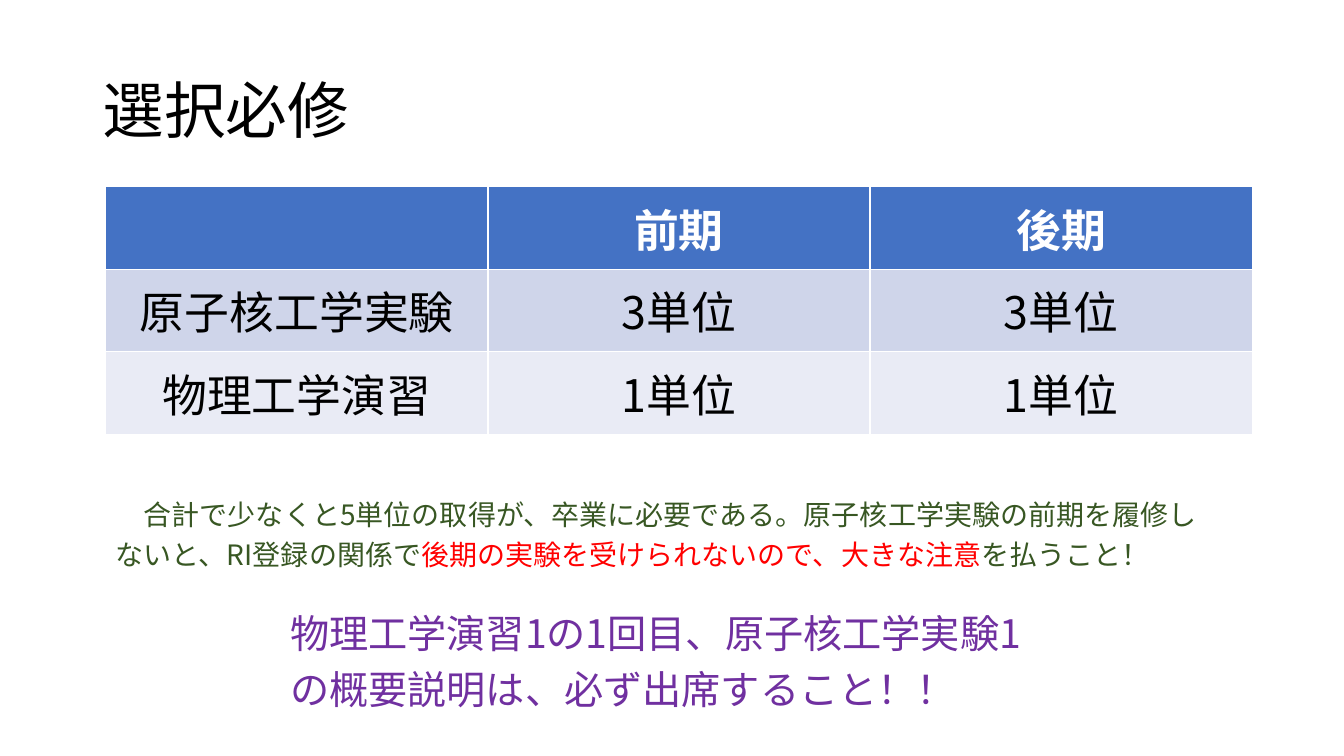
from lxml.etree import SubElement
from pptx import Presentation
from pptx.dml.color import RGBColor
from pptx.enum.text import MSO_ANCHOR, PP_ALIGN
from pptx.oxml.ns import qn
from pptx.util import Inches, Pt

FONT = "Noto Sans CJK JP"
COLORS = {
    "black": "000000",
    "white": "FFFFFF",
    "header": "4472C4",
    "odd_row": "CFD5EA",
    "even_row": "E9EBF5",
    "green": "385723",
    "red": "FF0000",
    "purple": "7030A0",
}
CREDITS = [
    ["", "前期", "後期"],
    ["原子核工学実験", "3単位", "3単位"],
    ["物理工学演習", "1単位", "1単位"],
]
ROW_STYLES = [("header", "white"), ("odd_row", "black"), ("even_row", "black")]
REQUIREMENT = [
    ("\u3000合計で少なくと5単位の取得が、卒業に必要である。"
     "原子核工学実験の前期を履修しないと、RI登録の関係で".replace("\u3000", "　"), "green"),
    ("後期の実験を受けられないので、大きな注意", "red"),
    ("を払うこと！", "green"),
]
ATTENDANCE = [("物理工学演習1の1回目、原子核工学実験1の概要説明は、必ず出席すること！！", "purple")]


def color(name):
    """Return the named palette colour."""
    return RGBColor.from_string(COLORS[name])


def style_paragraph(para, size, bold=False):
    """Set the size, weight and both Latin and East Asian typefaces."""
    para.font.size = Pt(size)
    para.font.bold = bold
    para.font.name = FONT
    SubElement(para.font._element, qn("a:ea"), typeface=FONT)


def add_text(page, box, spans, size, spacing, anchor=MSO_ANCHOR.TOP):
    """Place one wrapped paragraph of coloured spans in the box."""
    frame = page.shapes.add_textbox(*map(Inches, box)).text_frame
    frame.word_wrap = True
    frame.vertical_anchor = anchor
    para = frame.paragraphs[0]
    para.line_spacing = spacing
    style_paragraph(para, size)
    for text, name in spans:
        span = para.add_run()
        span.text = text
        span.font.color.rgb = color(name)


def add_credit_table(page, box):
    """Fill the box with the table of credits per term."""
    table = page.shapes.add_table(len(CREDITS), len(CREDITS[0]), *map(Inches, box)).table
    for row, (texts, (fill, ink)) in enumerate(zip(CREDITS, ROW_STYLES)):
        for column, text in enumerate(texts):
            cell = table.cell(row, column)
            cell.fill.solid()
            cell.fill.fore_color.rgb = color(fill)
            cell.vertical_anchor = MSO_ANCHOR.MIDDLE
            cell.text = text
            para = cell.text_frame.paragraphs[0]
            para.alignment = PP_ALIGN.CENTER
            style_paragraph(para, 32, bold=row == 0)
            para.font.color.rgb = color(ink)


def main():
    """Build and save the slide on required electives."""
    deck = Presentation()
    deck.slide_width, deck.slide_height = Inches(13.33), Inches(7.5)
    page = deck.slides.add_slide(deck.slide_layouts[6])
    add_text(page, (0.92, 0.4, 11.5, 1.45), [("選択必修", "black")], 44, 0.9, MSO_ANCHOR.MIDDLE)
    add_credit_table(page, (1.05, 1.85, 11.37, 2.46))
    add_text(page, (1.05, 4.82, 11.14, 0.89), REQUIREMENT, 20, 1.2)
    add_text(page, (2.78, 5.9, 7.67, 1.2), ATTENDANCE, 28, 1.2)
    deck.save("out.pptx")


if __name__ == "__main__":
    main()
